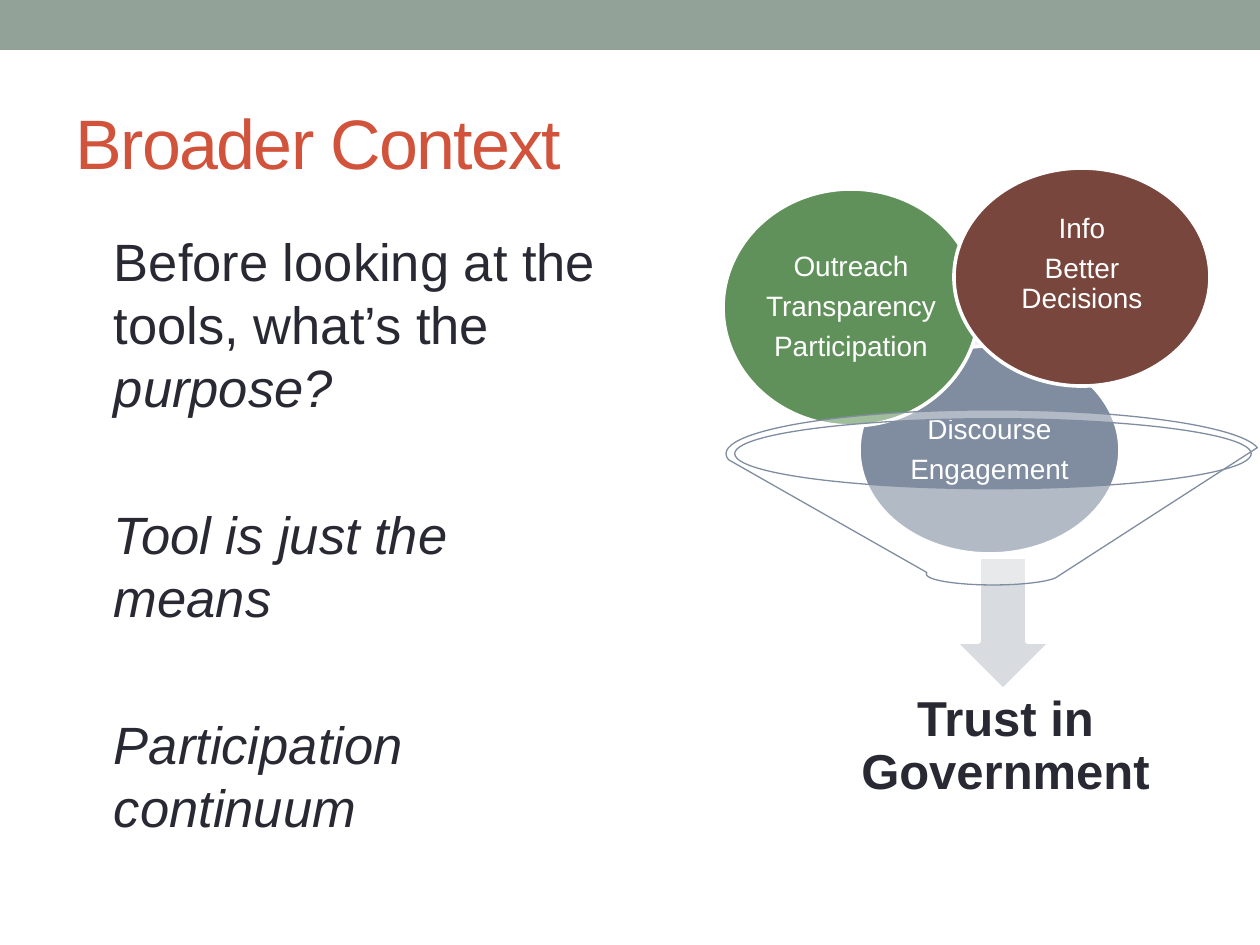
import pptx
import pptx.util
import pptx.dml.color
import pptx.enum.shapes
import pptx.enum.text
import lxml.etree

EMU_PER_PX = 914400 / 126
SHAPES = pptx.enum.shapes.MSO_SHAPE
ANCHOR = pptx.enum.text.MSO_ANCHOR
ALIGN = pptx.enum.text.PP_ALIGN
color = pptx.dml.color.RGBColor.from_string


def px(*lengths):
    return [pptx.util.Emu(round(length * EMU_PER_PX)) for length in lengths]


def style_shape(shape, fill, line=None, width=0, opacity=None):
    shape.shadow.inherit = False
    shape.fill.solid()
    shape.fill.fore_color.rgb = color(fill)
    if opacity is not None:
        color_element = shape.fill._xPr.solidFill[0]
        alpha = lxml.etree.SubElement(color_element, pptx.oxml.ns.qn("a:alpha"))
        alpha.set("val", str(opacity * 1000))
    if line:
        shape.line.color.rgb = color(line)
        shape.line.width = pptx.util.Pt(width)
    else:
        shape.line.fill.background()


presentation = pptx.Presentation()
presentation.slide_width, presentation.slide_height = px(1260, 945)
slide = presentation.slides.add_slide(presentation.slide_layouts[6])

# Top band
band = slide.shapes.add_shape(SHAPES.RECTANGLE, *px(0, 0, 1260, 50))
style_shape(band, "93A299")

# Funnel back, arrow and the three ideas that fall in
back = slide.shapes.add_shape(SHAPES.OVAL, *px(780, 270, 379, 132))
style_shape(back, "CDD0D6", opacity=40)
arrow = slide.shapes.add_shape(SHAPES.DOWN_ARROW, *px(955, 557, 96, 133))
style_shape(arrow, "D8DBDF", "FFFFFF", 2.08)

ideas = [
    ((859, 346, 261, 208), "808DA0", ["Discourse", "Engagement"], 2),
    ((723, 189, 256, 237), "61915A", ["Outreach", "Transparency", "Participation"], 2),
    ((954, 168, 256, 218), "79463D", ["Info", "Better Decisions"], 27),
]
text_blocks = []
for box, fill, lines, bottom in ideas:
    circle = slide.shapes.add_shape(SHAPES.OVAL, *px(*box))
    style_shape(circle, fill, "FFFFFF", 2.08)
    text_blocks.append(dict(
        shape=circle, insets=(2, 2, 2, bottom), anchor=ANCHOR.MIDDLE, align=ALIGN.CENTER,
        size=16, color="FFFFFF", line_spacing=0.9, gap=5.6,
        paragraphs=[[(line, False)] for line in lines]))

funnel = slide.shapes.add_shape(SHAPES.FUNNEL, *px(726, 410, 534, 175))
style_shape(funnel, "FFFFFF", "808DA0", 0.75, opacity=40)

# Title, body and outcome
text_blocks += [
    dict(shape=slide.shapes.add_textbox(*px(63, 73, 1134, 136)),
         insets=(13, 6, 13, 6), anchor=ANCHOR.MIDDLE, align=ALIGN.LEFT,
         size=40, color="D2533C", tracking=-100,
         paragraphs=[[("Broader Context", False)]]),
    dict(shape=slide.shapes.add_textbox(*px(63, 221, 557, 672)),
         insets=(51, 8, 13, 6), anchor=ANCHOR.TOP, align=ALIGN.LEFT,
         size=30, color="292934", line_spacing=pptx.util.Pt(36), gap=48,
         paragraphs=[
             [("Before looking at the tools, what’s the ", False), ("purpose?", True)],
             [("Tool is just the means", True)],
             [("Participation continuum", True)]]),
    dict(shape=slide.shapes.add_textbox(*px(829, 703, 353, 88)),
         insets=(28, 28, 28, 28), anchor=ANCHOR.MIDDLE, align=ALIGN.CENTER,
         size=28, color="292934", bold=True, line_spacing=0.9,
         paragraphs=[[("Trust in Government", False)]]),
]

# Fill every text block
for block in text_blocks:
    frame = block["shape"].text_frame
    frame.word_wrap = True
    frame.vertical_anchor = block["anchor"]
    (frame.margin_left, frame.margin_top,
     frame.margin_right, frame.margin_bottom) = px(*block["insets"])
    for index, runs in enumerate(block["paragraphs"]):
        paragraph = frame.add_paragraph() if index else frame.paragraphs[0]
        paragraph.alignment = block["align"]
        paragraph.line_spacing = block.get("line_spacing", 1.0)
        if index:
            paragraph.space_before = pptx.util.Pt(block["gap"])
        for text, italic in runs:
            run = paragraph.add_run()
            run.text = text
            run.font.name = "Arial"
            run.font.size = pptx.util.Pt(block["size"])
            run.font.bold = block.get("bold", False)
            run.font.italic = italic
            run.font.color.rgb = color(block["color"])
            if "tracking" in block:
                run._r.get_or_add_rPr().set("spc", str(block["tracking"]))

presentation.save("out.pptx")
